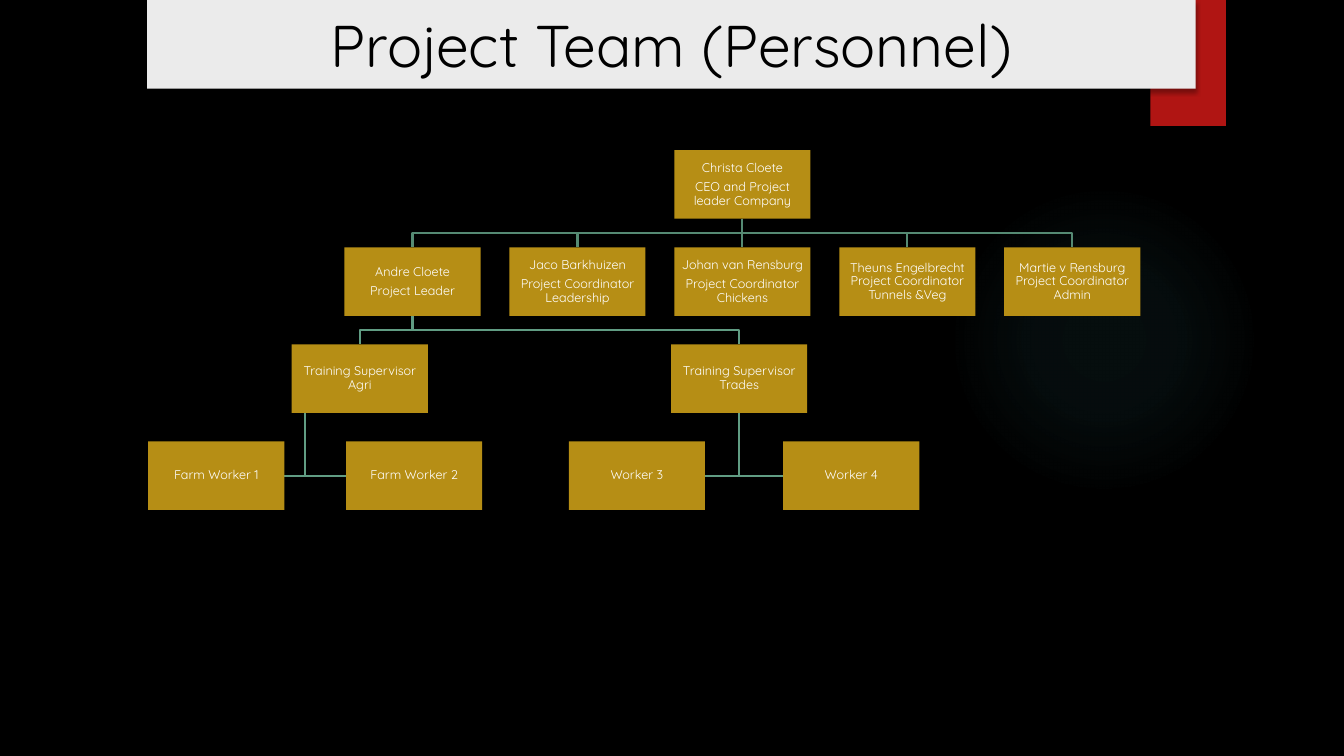
from dataclasses import dataclass

from pptx import Presentation
from pptx.dml.color import RGBColor
from pptx.enum.shapes import MSO_CONNECTOR, MSO_SHAPE
from pptx.enum.text import MSO_ANCHOR, PP_ALIGN
from pptx.oxml import parse_xml
from pptx.oxml.ns import nsdecls, qn
from pptx.util import Inches, Pt

RECT, OVAL = MSO_SHAPE.RECTANGLE, MSO_SHAPE.OVAL
STRAIGHT = MSO_CONNECTOR.STRAIGHT
CENTER, MIDDLE = PP_ALIGN.CENTER, MSO_ANCHOR.MIDDLE


@dataclass(frozen=True)
class Theme:
    """Colours, font and sizes of the slide."""
    background: str = "000000"
    banner: str = "EBEBEB"
    accent: str = "B01513"
    glow: str = "50B9C1"
    node: str = "B68E15"
    upper_line: str = "558A73"
    lower_line: str = "609C83"
    title_text: str = "000000"
    node_text: str = "FFFFFF"
    font: str = "Quicksand"
    title_size: float = 42
    node_size: float = 9
    line_width: float = 1.5


THEME = Theme()
NODE_W, NODE_H = 1.35, 0.68
LAST_COLUMN, LAST_ROW = 5.19, 3

NODES = {
    "ceo": (3.19, 0, ["Christa Cloete", "CEO and Project leader Company"]),
    "leader": (1.19, 1, ["Andre Cloete", "Project Leader"]),
    "leadership": (2.19, 1, ["Jaco Barkhuizen", "Project Coordinator Leadership"]),
    "chickens": (3.19, 1, ["Johan van Rensburg", "Project Coordinator Chickens"]),
    "tunnels": (4.19, 1, ["Theuns Engelbrecht Project Coordinator Tunnels &Veg"]),
    "admin": (5.19, 1, ["Martie v Rensburg Project Coordinator Admin"]),
    "agri": (0.87, 2, ["Training Supervisor Agri"]),
    "trades": (3.17, 2, ["Training Supervisor Trades"]),
    "farm 1": (0, 3, ["Farm Worker 1"]),
    "farm 2": (1.2, 3, ["Farm Worker 2"]),
    "worker 3": (2.55, 3, ["Worker 3"]),
    "worker 4": (3.85, 3, ["Worker 4"]),
}
BRANCHES = [
    ("ceo", ["admin", "tunnels", "chickens", "leadership", "leader"], THEME.upper_line),
    ("leader", ["trades", "agri"], THEME.lower_line),
]
HANGERS = [("trades", ["worker 4", "worker 3"], 0.5), ("agri", ["farm 1", "farm 2"], 0.1)]


def rgb(value):
    """Return a colour from its hex digits."""
    return RGBColor.from_string(value)


def paint(s, color):
    """Give a shape a plain fill, no line and no shadow."""
    s.fill.solid()
    s.fill.fore_color.rgb = rgb(color)
    s.line.fill.background()
    s.shadow.inherit = False


def drop_shadow(s, alpha, blur, dist):
    """Cast a soft black shadow straight down."""
    s._element.spPr.find(qn("a:effectLst")).append(parse_xml(
        f'<a:outerShdw {nsdecls("a")} blurRad="{Pt(blur)}" dist="{Pt(dist)}" '
        f'dir="5400000" algn="t" rotWithShape="0"><a:srgbClr val="000000">'
        f'<a:alpha val="{alpha * 1000}"/></a:srgbClr></a:outerShdw>'))


def add_run(p, text, size, color):
    """Add one formatted run to a paragraph."""
    r = p.add_run()
    r.text = text
    r.font.name = THEME.font
    r.font.size = Pt(size)
    r.font.color.rgb = rgb(color)


def add_glow(slide, box):
    """Draw the faint round light in the box."""
    s = slide.shapes.add_shape(OVAL, *map(Inches, box))
    stops = "".join(
        f'<a:gs pos="{pos * 1000}"><a:srgbClr val="{THEME.glow}">'
        f'<a:alpha val="{alpha * 1000}"/></a:srgbClr></a:gs>'
        for pos, alpha in ((0, 7), (36, 6), (69, 0)))
    s._element.spPr.insert(2, parse_xml(
        f'<a:gradFill {nsdecls("a")} rotWithShape="1"><a:gsLst>{stops}</a:gsLst>'
        '<a:path path="circle"><a:fillToRect l="50000" t="50000" r="50000" b="50000"/>'
        '</a:path></a:gradFill>'))
    s.line.fill.background()
    s.shadow.inherit = False


def add_tab(slide, box):
    """Draw the red tab behind the banner."""
    s = slide.shapes.add_shape(RECT, *map(Inches, box))
    paint(s, THEME.accent)
    drop_shadow(s, 45, 3, 2)


def add_banner(slide, box, text):
    """Place the title placeholder as a banner in front of the tab."""
    s = slide.shapes.title
    s.left, s.top, s.width, s.height = map(Inches, box)
    paint(s, THEME.banner)
    drop_shadow(s, 32, 3.5, 2.2)
    slide.shapes._spTree.append(s._element)
    tf = s.text_frame
    tf.word_wrap = True
    tf.vertical_anchor = MIDDLE
    p = tf.paragraphs[0]
    p.alignment = CENTER
    add_run(p, text, THEME.title_size, THEME.title_text)


def add_link(slide, points, color):
    """Draw a line through the points, straight or with corners."""
    if len({x for x, _ in points}) == 1:
        s = slide.shapes.add_connector(STRAIGHT, *points[0], *points[-1])
        s._element.spPr.append(parse_xml(f'<a:effectLst {nsdecls("a")}/>'))
    else:
        builder = slide.shapes.build_freeform(*points[0])
        builder.add_line_segments(points[1:], close=False)
        s = builder.convert_to_shape()
        s.fill.background()
        s.shadow.inherit = False
    s.line.color.rgb = rgb(color)
    s.line.width = Pt(THEME.line_width)


def add_node(slide, box, lines):
    """Draw one person or post with its lines of text."""
    s = slide.shapes.add_shape(RECT, *box)
    paint(s, THEME.node)
    tf = s.text_frame
    tf.word_wrap = True
    tf.vertical_anchor = MIDDLE
    tf.margin_left = tf.margin_right = tf.margin_top = tf.margin_bottom = Inches(0.01)
    for i, line in enumerate(lines):
        p = tf.paragraphs[0] if i == 0 else tf.add_paragraph()
        p.alignment = CENTER
        p.line_spacing = 0.9
        p.space_before = Pt(4 if i else 0)
        add_run(p, line, THEME.node_size, THEME.node_text)


def add_org_chart(slide, box):
    """Lay the nodes on a grid in the box and join them by lines."""
    left, top, width, height = map(Inches, box)
    w, h = Inches(NODE_W), Inches(NODE_H)
    step_x, step_y = (width - w) / LAST_COLUMN, (height - h) / LAST_ROW
    spots = {name: (round(left + col * step_x), round(top + row * step_y))
             for name, (col, row, _) in NODES.items()}
    for parent, children, color in BRANCHES:
        x, y = spots[parent]
        for child in children:
            child_x, child_y = spots[child]
            start, end = x + w // 2, child_x + w // 2
            bend = (y + h + child_y) // 2
            add_link(slide, [(start, y + h), (start, bend), (end, bend), (end, child_y)], color)
    for parent, children, share in HANGERS:
        x, y = spots[parent]
        trunk = round(x + share * w)
        for child in children:
            child_x, child_y = spots[child]
            end = child_x if child_x > trunk else child_x + w
            middle = child_y + h // 2
            add_link(slide, [(trunk, y + h), (trunk, middle), (end, middle)], THEME.lower_line)
    for name, (_, _, lines) in NODES.items():
        add_node(slide, (*spots[name], w, h), lines)


def main():
    """Build the project team slide and save it."""
    prs = Presentation()
    prs.slide_width, prs.slide_height = Inches(13.33), Inches(7.5)
    slide = prs.slides.add_slide(prs.slide_layouts[5])
    slide.background.fill.solid()
    slide.background.fill.fore_color.rgb = rgb(THEME.background)
    add_glow(slide, (9.41, 1.83, 3.08, 3.08))
    add_tab(slide, (11.41, 0, 0.75, 1.25))
    add_banner(slide, (1.46, 0, 10.4, 0.88), "Project Team (Personnel)")
    add_org_chart(slide, (1.47, 1.49, 9.84, 3.57))
    prs.save("out.pptx")


if __name__ == "__main__":
    main()
